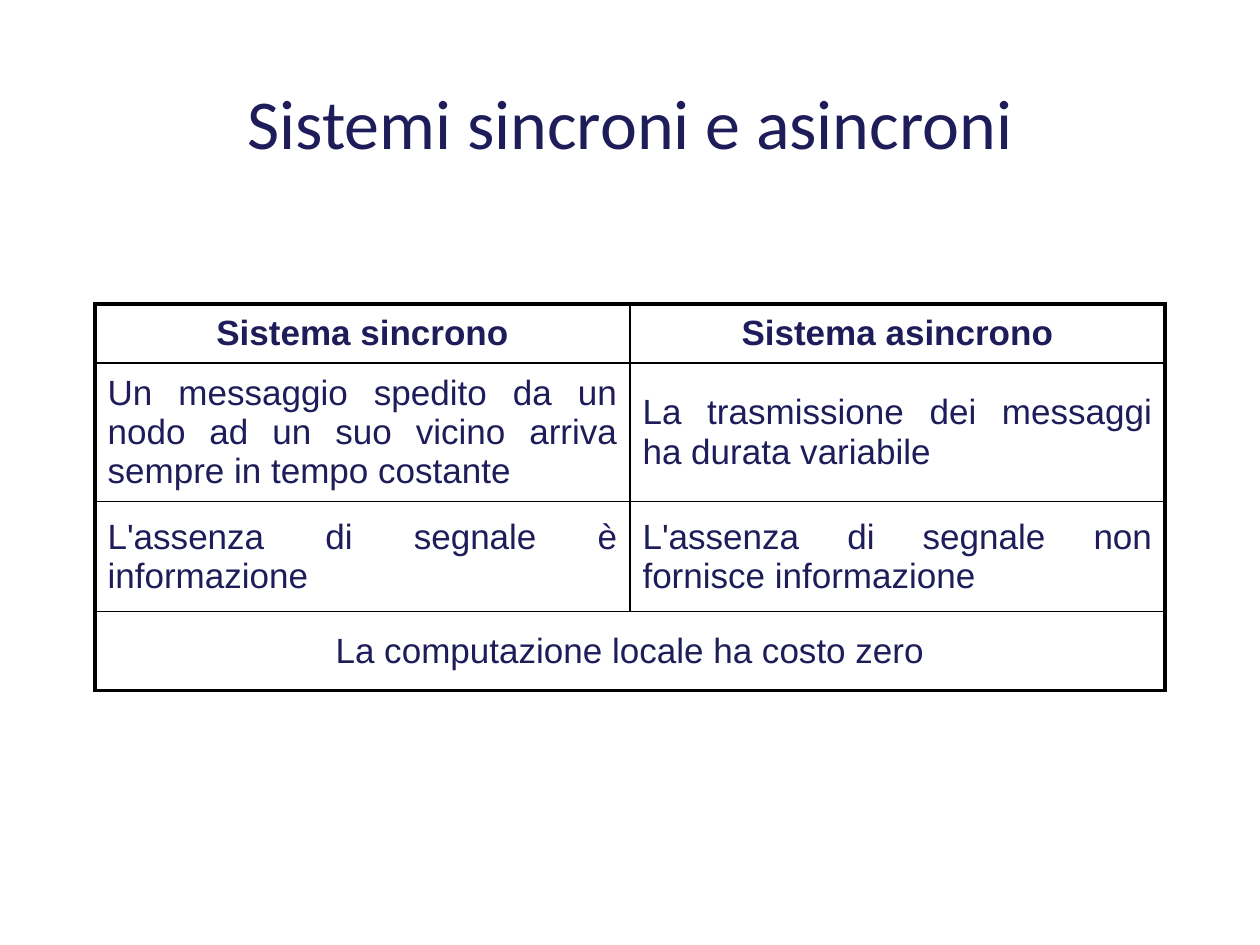
from lxml.etree import SubElement
from pptx import Presentation
from pptx.dml.color import RGBColor
from pptx.enum.text import MSO_ANCHOR as Anchor, PP_ALIGN as Align
from pptx.oxml.ns import qn
from pptx.util import Emu, Pt

PX = 914400 // 126
NAVY, BLACK = "1E1D5A", "000000"
THIN, THICK = 1, 2.25


def write(frame, text, font, size, align, bold=False):
    frame.text = text
    para = frame.paragraphs[0]
    para.alignment = align
    span = para.runs[0].font
    span.name, span.size, span.bold = font, Pt(size), bold
    span.color.rgb = RGBColor.from_string(NAVY)


def add_border(cell, side, points):
    line = SubElement(cell._tc.get_or_add_tcPr(), qn(f"a:ln{side}"), w=str(Pt(points)))
    fill = SubElement(line, qn("a:solidFill"))
    SubElement(fill, qn("a:srgbClr"), val=BLACK)


deck = Presentation()
deck.slide_width, deck.slide_height = Emu(1260 * PX), Emu(945 * PX)
page = deck.slides.add_slide(deck.slide_layouts[6])

# Title
box = page.shapes.add_textbox(95 * PX, 20 * PX, 1070 * PX, 203 * PX)
box.text_frame.word_wrap = True
box.text_frame.vertical_anchor = Anchor.MIDDLE
write(box.text_frame, "Sistemi sincroni e asincroni", "Calibri", 40, Align.CENTER)

# Comparison table: row height, alignment, texts
rows = [
    (59, Align.CENTER, ["Sistema sincrono", "Sistema asincrono"]),
    (129, Align.JUSTIFY, [
        "Un messaggio spedito da un nodo ad un suo vicino arriva sempre in tempo costante",
        "La trasmissione dei messaggi ha durata variabile"]),
    (110, Align.JUSTIFY, [
        "L'assenza di segnale è informazione",
        "L'assenza di segnale non fornisce informazione"]),
    (79, Align.CENTER, ["La computazione locale ha costo zero"]),
]
last_row = len(rows) - 1
height = sum(row[0] for row in rows)
table = page.shapes.add_table(len(rows), 2, 95 * PX, 304 * PX, 1070 * PX, height * PX).table
table.first_row = table.horz_banding = False
table.cell(last_row, 0).merge(table.cell(last_row, 1))

for r, (row_height, align, texts) in enumerate(rows):
    table.rows[r].height = Emu(row_height * PX)
    for c in range(2):
        cell = table.cell(r, c)
        cell.vertical_anchor = Anchor.MIDDLE
        if c < len(texts):
            write(cell.text_frame, texts[c], "Arial", 20, align, bold=r == 0)
        reaches_right = c == 1 or cell.is_merge_origin
        outer_sides = {"L": c == 0, "R": reaches_right, "T": r == 0, "B": r == last_row}
        for side, outer in outer_sides.items():
            add_border(cell, side, THICK if outer else THIN)
        cell.fill.background()

deck.save("out.pptx")
